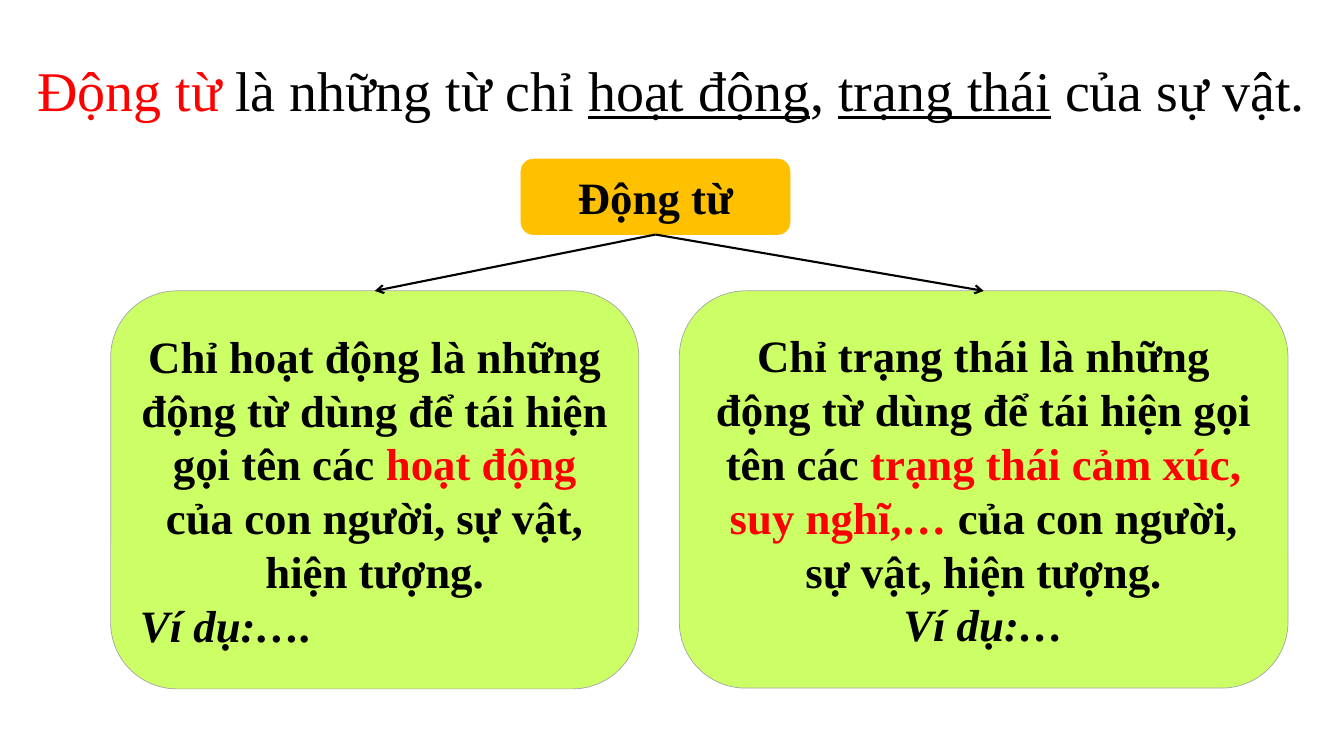
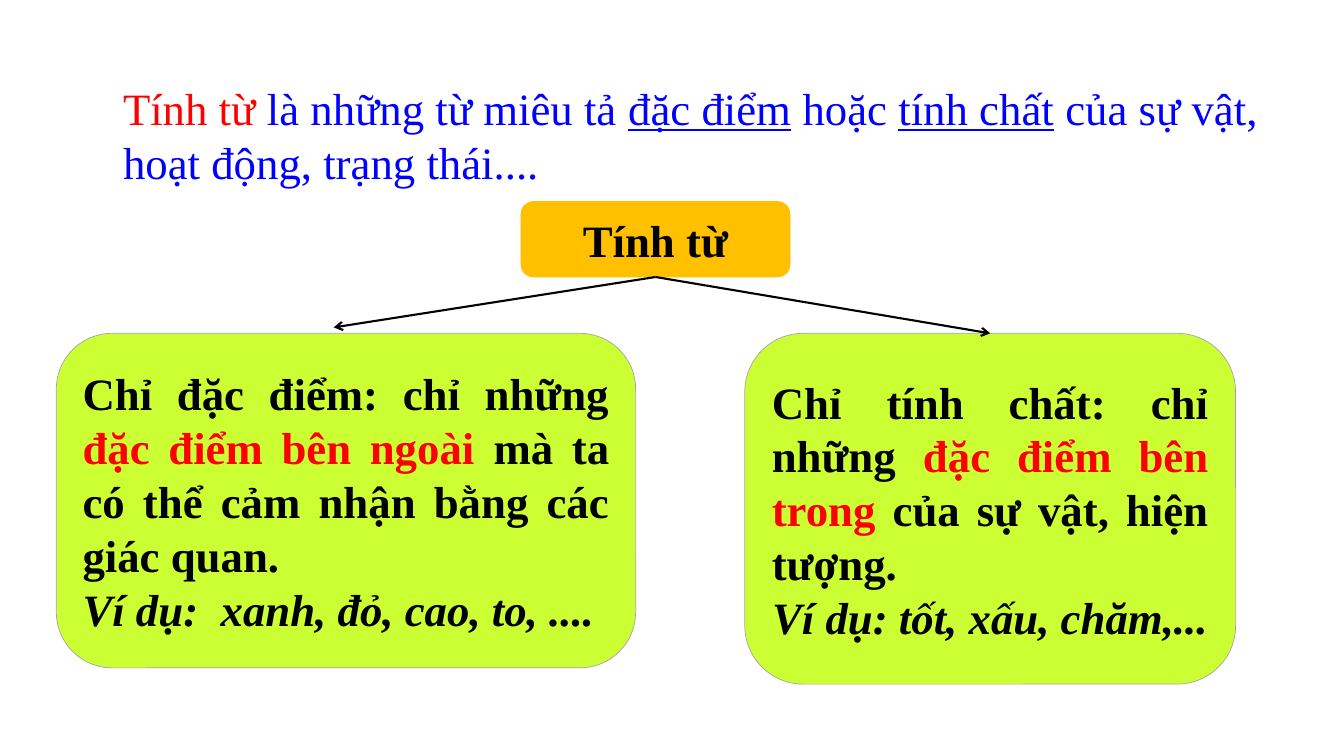
from pptx import Presentation
from pptx.dml import color
from pptx.enum import shapes, text
from pptx.oxml import parse_xml
from pptx.oxml import ns
from pptx.util import Cm, Pt

FONT = "Times New Roman"
COLORS = {
    "red": "FF0000",
    "blue": "0000FF",
    "black": "000000",
    "amber": "FFC000",
    "lime": "CCFF66",
    "bright_lime": "CCFF33",
    "grey": "A5A5A5",
}
LEFT, CENTER, JUSTIFY = (
    text.PP_ALIGN.LEFT,
    text.PP_ALIGN.CENTER,
    text.PP_ALIGN.JUSTIFY,
)
TERM_LEFT, TERM_WIDTH, TERM_HEIGHT = 13.13, 6.78, 1.9
BRANCH_GAP = 1.42


def rgb(name):
    return color.RGBColor.from_string(COLORS[name])


def add_run(paragraph, words, color_name="black", size=32, **styles):
    run = paragraph.add_run()
    run.text = words
    run.font.name = FONT
    run.font.size = Pt(size)
    run.font.color.rgb = rgb(color_name)
    for style, value in styles.items():
        setattr(run.font, style, value)


def set_definition(slide, box, size, main_color, term, parts):
    title = slide.shapes.title
    title.left, title.top, title.width, title.height = map(Cm, box)
    frame = title.text_frame
    frame.margin_left = frame.margin_right = 0
    frame.margin_top = frame.margin_bottom = 0
    frame.word_wrap = True
    frame.auto_size = text.MSO_AUTO_SIZE.NONE
    frame.vertical_anchor = text.MSO_ANCHOR.TOP
    paragraph = frame.paragraphs[0]
    paragraph.alignment = LEFT
    add_run(paragraph, term + " ", "red", size, bold=False)
    for words, underlined in parts:
        add_run(paragraph, words, main_color, size, bold=False, underline=underlined)


def add_panel(slide, box, fill, outline):
    panel = slide.shapes.add_shape(
        shapes.MSO_SHAPE.ROUNDED_RECTANGLE, *map(Cm, box)
    )
    panel.shadow.inherit = False
    panel.fill.solid()
    panel.fill.fore_color.rgb = rgb(fill)
    panel.line.color.rgb = rgb(outline)
    panel.line.width = Pt(0.5)
    panel.text_frame.word_wrap = True
    panel.text_frame.vertical_anchor = text.MSO_ANCHOR.MIDDLE
    return panel


def add_term(slide, top, term):
    box = (TERM_LEFT, top, TERM_WIDTH, TERM_HEIGHT)
    panel = add_panel(slide, box, "amber", "amber")
    paragraph = panel.text_frame.paragraphs[0]
    paragraph.alignment = CENTER
    add_run(paragraph, term, bold=True)
    return panel


def add_branch(slide, box, fill, meaning, meaning_align, example, example_align):
    panel = add_panel(slide, box, fill, "grey")
    explanation = panel.text_frame.paragraphs[0]
    explanation.alignment = meaning_align
    for words, color_name in zip(meaning, ("black", "red", "black")):
        add_run(explanation, words, color_name, bold=True)
    sample = panel.text_frame.add_paragraph()
    sample.alignment = example_align
    add_run(sample, example, bold=True, italic=True)
    return panel


def add_arrow(slide, term, branch, tip=None):
    end = map(Cm, tip) if tip else (branch.left, branch.top)
    arrow = slide.shapes.add_connector(
        shapes.MSO_CONNECTOR.STRAIGHT, term.left, term.top, *end
    )
    arrow.begin_connect(term, 2)
    if tip is None:
        arrow.end_connect(branch, 0)
    arrow.line.color.rgb = rgb("black")
    arrow.line.width = Pt(1.5)
    namespace = ns.nsdecls("a")
    arrow.line._get_or_add_ln().append(
        parse_xml(f'<a:tailEnd {namespace} type="arrow"/>')
    )
    arrow._element.spPr.append(parse_xml(f"<a:effectLst {namespace}/>"))


def add_word_class(deck, term, definition, term_top, fill, branches):
    slide = deck.slides.add_slide(deck.slide_layouts[5])
    set_definition(slide, term=term, **definition)
    root = add_term(slide, term_top, term)
    branch_top = term_top + TERM_HEIGHT + BRANCH_GAP
    for (left, width, height), tip, *content in branches:
        box = (left, branch_top, width, height)
        branch = add_branch(slide, box, fill, *content)
        add_arrow(slide, root, branch, tip)


def main():
    deck = Presentation()
    deck.slide_width, deck.slide_height = Cm(33.87), Cm(19.05)
    add_word_class(
        deck,
        "Động từ",
        {
            "box": (0.94, 1.4, 32.36, 1.7),
            "size": 40,
            "main_color": "black",
            "parts": [
                ("là những từ chỉ ", False),
                ("hoạt động", True),
                (", ", False),
                ("trạng thái", True),
                (" của sự vật.", False),
            ],
        },
        4.01,
        "lime",
        [
            (
                (2.79, 13.31, 10.03),
                None,
                (
                    "Chỉ hoạt động là những động từ dùng để tái hiện gọi tên các ",
                    "hoạt động",
                    " của con người, sự vật, hiện tượng.",
                ),
                CENTER,
                "Ví dụ:….",
                LEFT,
            ),
            (
                (17.12, 15.34, 10.01),
                None,
                (
                    "Chỉ trạng thái là những động từ dùng để tái hiện gọi tên các ",
                    "trạng thái cảm xúc, suy nghĩ,…",
                    " của con người, sự vật, hiện tượng.",
                ),
                CENTER,
                "Ví dụ:…",
                CENTER,
            ),
        ],
    )
    add_word_class(
        deck,
        "Tính từ",
        {
            "box": (3.1, 2.03, 28.98, 2.74),
            "size": 32,
            "main_color": "blue",
            "parts": [
                ("là những từ miêu tả ", False),
                ("đặc điểm", True),
                (" hoặc ", False),
                ("tính chất", True),
                (" của sự vật, hoạt động, trạng thái....", False),
            ],
        },
        5.08,
        "bright_lime",
        [
            (
                (1.42, 14.6, 8.43),
                (8.41, 8.25),
                (
                    "Chỉ đặc điểm: chỉ những ",
                    "đặc điểm bên ngoài",
                    " mà ta có thể cảm nhận bằng các giác quan.",
                ),
                JUSTIFY,
                "Ví dụ:  xanh, đỏ, cao, to, ....",
                LEFT,
            ),
            (
                (18.77, 12.37, 8.84),
                None,
                (
                    "Chỉ tính chất: chỉ những ",
                    "đặc điểm bên trong",
                    " của sự vật, hiện tượng.",
                ),
                JUSTIFY,
                "Ví dụ: tốt, xấu, chăm,...",
                CENTER,
            ),
        ],
    )
    deck.save("out.pptx")


if __name__ == "__main__":
    main()
